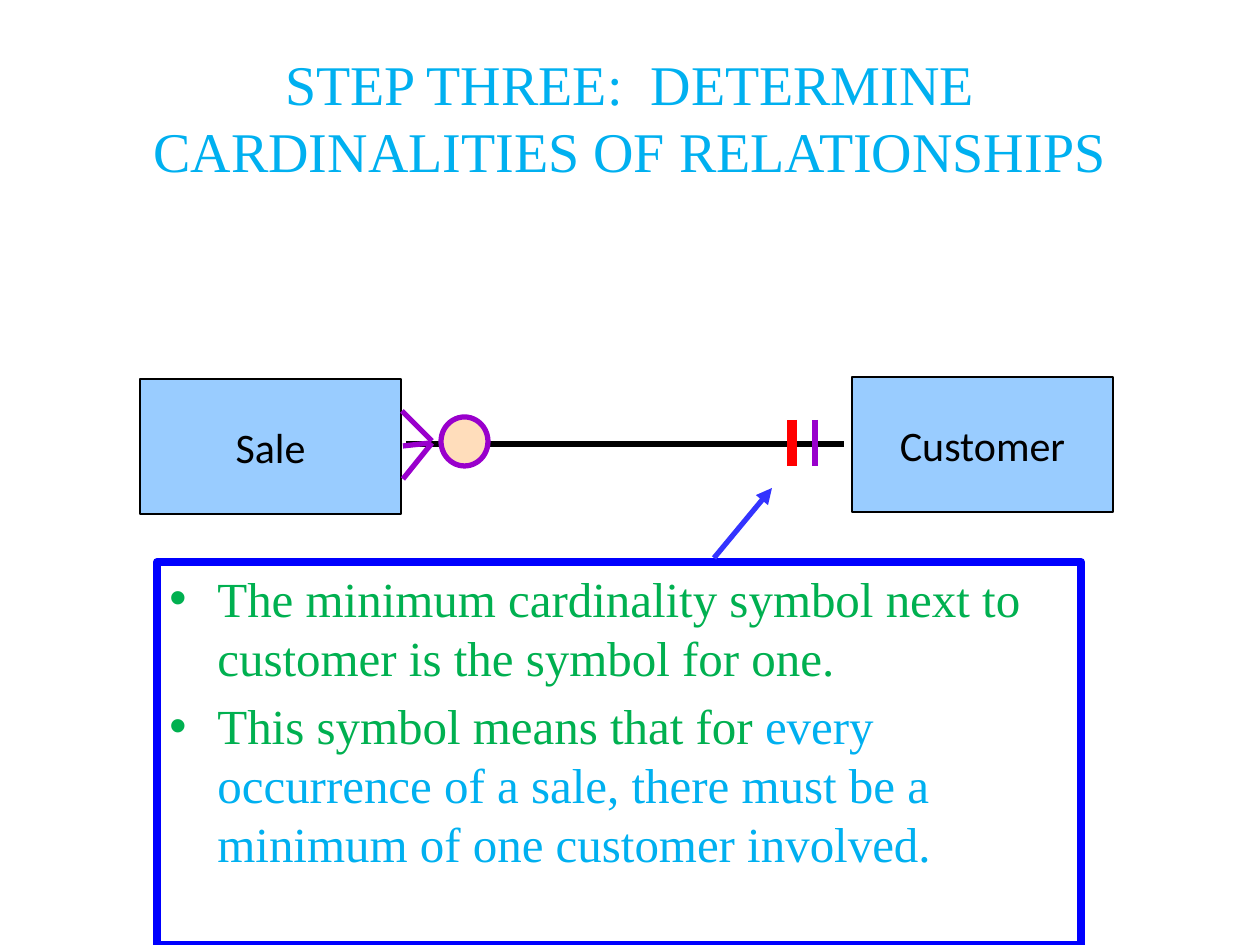
from dataclasses import dataclass

from lxml import etree
from pptx import Presentation, util as u
from pptx.dml.color import RGBColor
from pptx.enum import shapes as sh, text as tx
from pptx.oxml import ns

EMU_PER_PX = u.Inches(1) / 126
COLOURS = {
    "title": "00B0F0", "green": "00B050", "black": "000000", "white": "FFFFFF",
    "entity": "99CCFF", "zero": "FFDDBB", "purple": "9900CC", "red": "FF0000",
    "frame": "0000FF", "arrow": "3333FF",
}
SERIF, SANS = "Times New Roman", "Calibri"


@dataclass(frozen=True)
class Panel:
    left: int
    top: int
    width: int
    height: int
    fill: str
    line: str
    weight: float
    kind: sh.MSO_SHAPE = sh.MSO_SHAPE.RECTANGLE
    label: str = ""


@dataclass(frozen=True)
class Stroke:
    x1: int
    y1: int
    x2: int
    y2: int
    colour: str = "purple"
    weight: float = 3
    arrow: bool = False


def px(length: int) -> int:
    return round(length * EMU_PER_PX)


def rgb(name: str) -> RGBColor:
    return RGBColor.from_string(COLOURS[name])


def apply(target, values: dict) -> None:
    for name, value in values.items():
        setattr(target, name, value)


def add_run(paragraph, words: str, font: str, size: int, colour: str) -> None:
    run = paragraph.add_run()
    run.text = words
    apply(run.font, {"name": font, "size": u.Pt(size)})
    run.font.color.rgb = rgb(colour)


def draw_panel(slide, panel: Panel):
    box = slide.shapes.add_shape(
        panel.kind, *map(px, (panel.left, panel.top, panel.width, panel.height)))
    box.shadow.inherit = False
    box.fill.solid()
    box.fill.fore_color.rgb = rgb(panel.fill)
    box.line.color.rgb = rgb(panel.line)
    box.line.width = u.Pt(panel.weight)
    if panel.label:
        apply(box.text_frame, {"word_wrap": False,
                               "vertical_anchor": tx.MSO_ANCHOR.MIDDLE})
        paragraph = box.text_frame.paragraphs[0]
        paragraph.alignment = tx.PP_ALIGN.CENTER
        add_run(paragraph, panel.label, SANS, 24, "black")
    return box


def draw_stroke(slide, stroke: Stroke) -> None:
    line = slide.shapes.add_connector(
        sh.MSO_CONNECTOR.STRAIGHT,
        *map(px, (stroke.x1, stroke.y1, stroke.x2, stroke.y2)))
    line.line.color.rgb = rgb(stroke.colour)
    line.line.width = u.Pt(stroke.weight)
    if stroke.arrow:
        etree.SubElement(line.line._get_or_add_ln(), ns.qn("a:tailEnd"), type="triangle")
    etree.SubElement(line._element.spPr, ns.qn("a:effectLst"))


def add_bullet(paragraph, runs: list[tuple[str, str]]) -> None:
    apply(paragraph, {"alignment": tx.PP_ALIGN.LEFT, "space_before": u.Pt(5.6)})
    properties = paragraph._p.get_or_add_pPr()
    indent = px(48)
    properties.set("marL", str(indent))
    properties.set("indent", str(-indent))
    etree.SubElement(properties, ns.qn("a:buFont"), typeface="Arial")
    etree.SubElement(properties, ns.qn("a:buChar"), char="•")
    for words, colour in runs:
        add_run(paragraph, words, SERIF, 28, colour)


ENTITIES = [
    Panel(140, 379, 261, 135, "entity", "black", 0.75, label="Sale"),
    Panel(852, 377, 261, 135, "entity", "black", 0.75, label="Customer"),
]
RELATIONSHIP = [
    Stroke(406, 444, 844, 444, "black"),
    # Minimum and maximum of one, next to the customer
    Stroke(792, 420, 792, 466, "red", 6),
    Stroke(815, 420, 815, 466),
    # Crow's foot, next to the sale
    Stroke(432, 441, 402, 411),
    Stroke(403, 446, 430, 443),
    Stroke(432, 443, 403, 479),
]
ZERO = Panel(441, 417, 47, 49, "zero", "purple", 3, sh.MSO_SHAPE.OVAL)
EXPLANATION = Panel(157, 562, 924, 383, "white", "frame", 4.5)
POINTER = Stroke(714, 558, 772, 488, "arrow", 3, True)
BULLETS = [
    [("The minimum cardinality symbol next to customer is the symbol for one.", "green")],
    [("This symbol means that for ", "green"),
     ("every occurrence of a sale, there must be a minimum of one customer involved.",
      "title")],
]


def main() -> None:
    deck = Presentation()
    apply(deck, {"slide_width": u.Inches(10), "slide_height": u.Inches(7.5)})
    slide = deck.slides.add_slide(deck.slide_layouts[5])

    # Title
    title = slide.shapes.title
    apply(title, {"left": px(63), "top": px(38), "width": px(1134), "height": px(157)})
    apply(title.text_frame, {"word_wrap": True, "vertical_anchor": tx.MSO_ANCHOR.MIDDLE})
    heading = title.text_frame.paragraphs[0]
    heading.alignment = tx.PP_ALIGN.CENTER
    add_run(heading, "STEP THREE:  DETERMINE CARDINALITIES OF RELATIONSHIPS",
            SERIF, 32, "title")

    # Entities and their relationship
    for entity in ENTITIES:
        draw_panel(slide, entity)
    for stroke in RELATIONSHIP:
        draw_stroke(slide, stroke)
    draw_panel(slide, ZERO)

    # Explanation
    frame = draw_panel(slide, EXPLANATION).text_frame
    apply(frame, {"word_wrap": True, "vertical_anchor": tx.MSO_ANCHOR.TOP})
    for number, runs in enumerate(BULLETS):
        add_bullet(frame.add_paragraph() if number else frame.paragraphs[0], runs)
    draw_stroke(slide, POINTER)

    deck.save("out.pptx")


if __name__ == "__main__":
    main()
